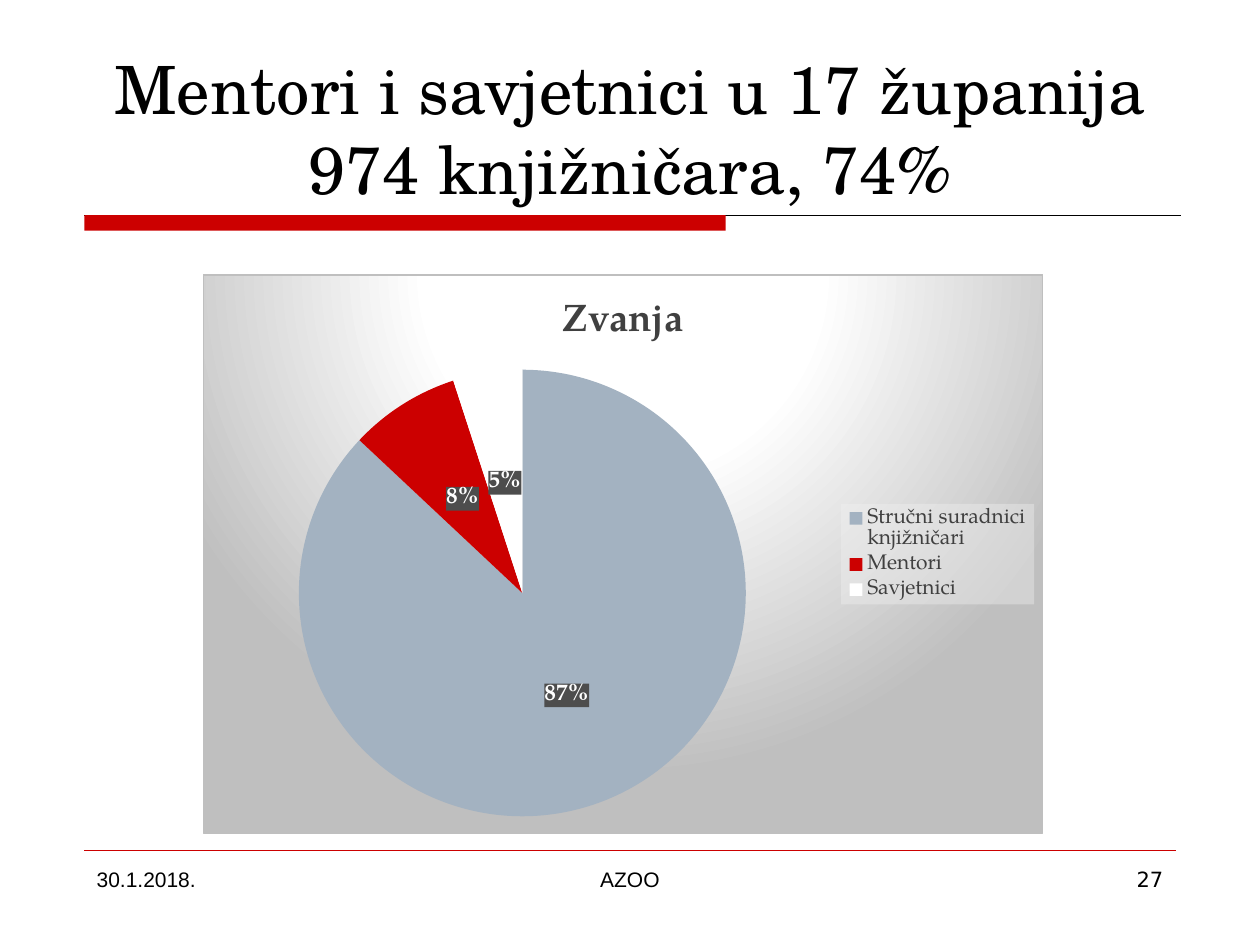
from lxml import etree
from pptx import Presentation
from pptx.chart.data import CategoryChartData
from pptx.dml.color import RGBColor
from pptx.enum.chart import XL_CHART_TYPE, XL_LABEL_POSITION, XL_LEGEND_POSITION
from pptx.enum.shapes import MSO_CONNECTOR, MSO_SHAPE
from pptx.enum.text import MSO_ANCHOR, PP_ALIGN
from pptx.oxml import parse_xml
from pptx.oxml.ns import nsdecls, qn
from pptx.util import Cm, Pt

PIE = XL_CHART_TYPE.PIE
CENTER_LABEL = XL_LABEL_POSITION.CENTER
LEGEND_RIGHT = XL_LEGEND_POSITION.RIGHT
STRAIGHT = MSO_CONNECTOR.STRAIGHT
RECTANGLE = MSO_SHAPE.RECTANGLE
TOP, BOTTOM = MSO_ANCHOR.TOP, MSO_ANCHOR.BOTTOM
LEFT, CENTER, RIGHT = PP_ALIGN.LEFT, PP_ALIGN.CENTER, PP_ALIGN.RIGHT

RED, BLACK, WHITE, GREY = "CC0000", "000000", "FFFFFF", "404040"
SERIF = "TeX Gyre Pagella"


def set_font(font, name, size, color, bold=False):
    font.name = name
    font.size = Pt(size)
    font.bold = bold
    font.color.rgb = RGBColor.from_string(color)


def solid_fill(color, alpha):
    return parse_xml(
        f'<c:spPr {nsdecls("c", "a")}><a:solidFill><a:srgbClr val="{color}">'
        f'<a:alpha val="{alpha * 1000}"/></a:srgbClr></a:solidFill></c:spPr>'
    )


prs = Presentation()
prs.slide_width, prs.slide_height = Cm(25.4), Cm(19.05)
s = prs.slides.add_slide(prs.slide_layouts[6])

for y, right, color, width in [(4.34, 23.8, BLACK, 0.25), (17.14, 23.7, RED, 0.25)]:
    rule = s.shapes.add_connector(STRAIGHT, Cm(1.7), Cm(y), Cm(right), Cm(y))
    rule.line.color.rgb = RGBColor.from_string(color)
    rule.line.width = Pt(width)
    etree.SubElement(rule._element.spPr, qn("a:effectLst"))

bar = s.shapes.add_shape(RECTANGLE, Cm(1.7), Cm(4.34), Cm(12.93), Cm(0.31))
bar.shadow.inherit = False
bar.fill.solid()
bar.fill.fore_color.rgb = RGBColor.from_string(RED)
bar.line.fill.background()

data = CategoryChartData()
data.categories = ["Stručni suradnici knjižničari", "Mentori", "Savjetnici"]
data.add_series("Zvanja", [87, 8, 5])
chart = s.shapes.add_chart(PIE, Cm(4.09), Cm(5.53), Cm(16.94), Cm(11.28), data).chart
set_font(chart.font, "Arial", 10, BLACK)
chart._chartSpace.find(qn("c:txPr")).addprevious(parse_xml(
    f'<c:spPr {nsdecls("c", "a")}><a:gradFill><a:gsLst>'
    '<a:gs pos="0"><a:srgbClr val="FFFFFF"/></a:gs>'
    '<a:gs pos="39000"><a:srgbClr val="FFFFFF"/></a:gs>'
    '<a:gs pos="100000"><a:srgbClr val="BFBFBF"/></a:gs></a:gsLst>'
    '<a:path path="circle"><a:fillToRect l="50000" t="-80000" r="50000" b="180000"/></a:path>'
    '</a:gradFill><a:ln w="9525"><a:solidFill><a:srgbClr val="BFBFBF"/></a:solidFill></a:ln></c:spPr>'
))

chart.has_title = True
chart.chart_title.include_in_layout = False
p = chart.chart_title.text_frame.paragraphs[0]
p.text = "Zvanja"
set_font(p.runs[0].font, SERIF, 22, GREY, True)

plot = chart.plots[0]
plot.vary_by_categories = True
for i, color in enumerate(["A3B2C1", RED, WHITE]):
    fill = plot.series[0].points[i].format.fill
    fill.solid()
    fill.fore_color.rgb = RGBColor.from_string(color)

plot.has_data_labels = True
labels = plot.data_labels
labels.show_percentage = True
labels.show_value = False
labels.number_format = "0%"
labels.number_format_is_linked = False
labels.position = CENTER_LABEL
set_font(labels.font, SERIF, 13.3, WHITE, True)
labels._element.find(qn("c:txPr")).addprevious(solid_fill("4D4D4D", 100))

chart.has_legend = True
legend = chart.legend
legend.position = LEGEND_RIGHT
legend.include_in_layout = False
set_font(legend.font, SERIF, 12, GREY)
legend._element.find(qn("c:txPr")).addprevious(solid_fill("F2F2F2", 39))

plot_area = chart._chartSpace.chart.plotArea
for area, follower, inner, box in [
    (plot_area, "c:pieChart", '<c:layoutTarget val="inner"/>', (0.11, 0.17, 0.54, 0.8)),
    (legend._element, "c:overlay", "", (0.76, 0.41, 0.23, 0.18)),
]:
    for old in area.findall(qn("c:layout")):
        area.remove(old)
    modes = "".join(f'<c:{k}Mode val="edge"/>' for k in "xy")
    sizes = "".join(f'<c:{k} val="{v}"/>' for k, v in zip("xywh", box))
    area.find(qn(follower)).addprevious(parse_xml(
        f'<c:layout {nsdecls("c")}><c:manualLayout>{inner}{modes}{sizes}</c:manualLayout></c:layout>'
    ))

for lines, x, y, w, h, font, size, align, anchor in [
    (["Mentori i savjetnici u 17 županija", "974 knjižničara, 74%"],
     1.59, 0.94, 22.23, 3.38, "TeX Gyre Schola", 38, CENTER, BOTTOM),
    (["30.1.2018."], 1.7, 17.35, 5.5, 1.32, "Arial", 12, LEFT, TOP),
    (["AZOO"], 8.68, 17.35, 8.04, 1.32, "Arial", 12, CENTER, TOP),
    (["27"], 18.2, 17.35, 5.5, 1.32, "DejaVu Sans", 12, RIGHT, TOP),
]:
    tf = s.shapes.add_textbox(Cm(x), Cm(y), Cm(w), Cm(h)).text_frame
    tf.word_wrap = True
    tf.vertical_anchor = anchor
    tf.text = "\n".join(lines)
    for p in tf.paragraphs:
        p.alignment = align
        set_font(p.font, font, size, BLACK)

prs.save("out.pptx")
